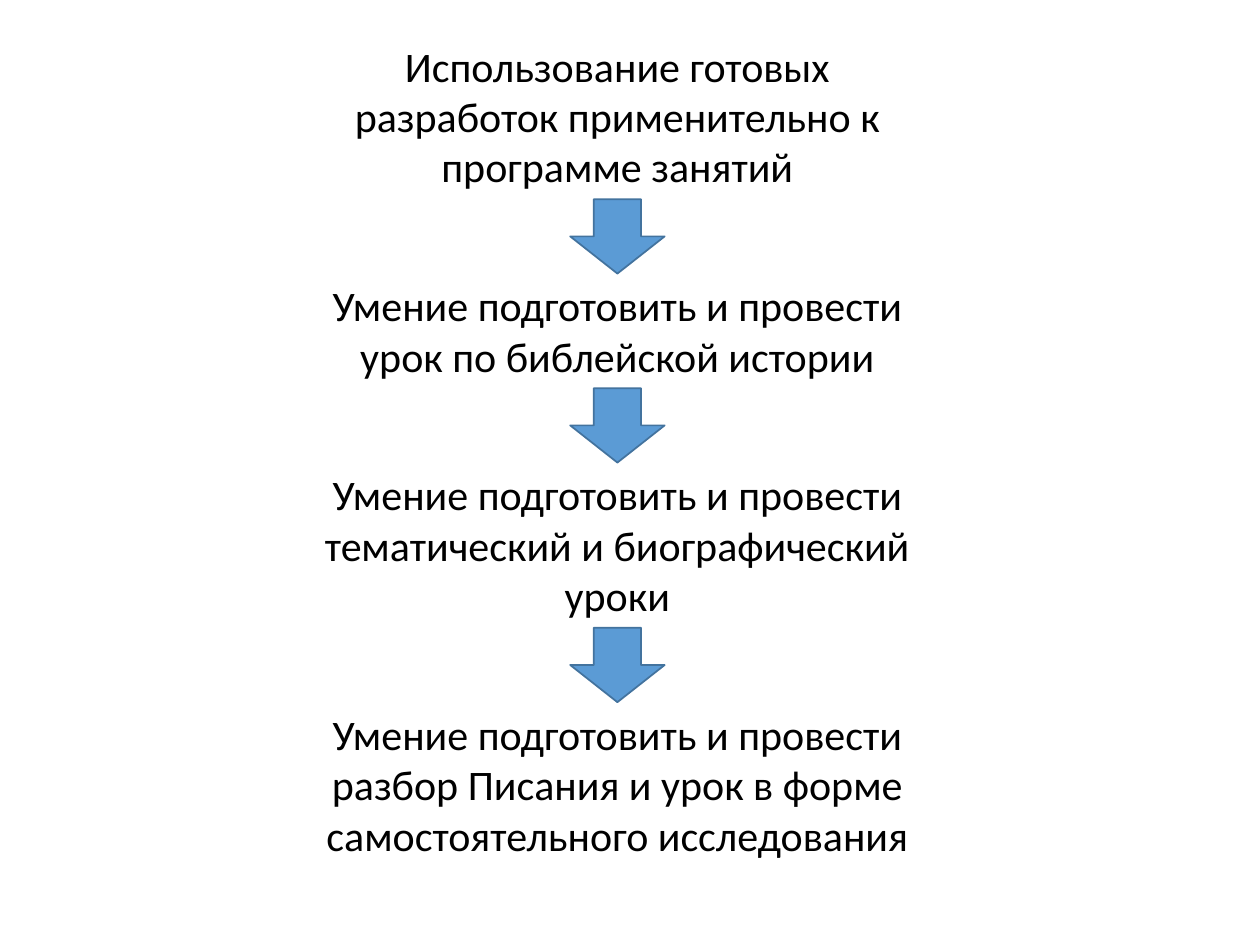
"""Build a slide with four teaching steps joined by down arrows."""
from pptx import Presentation
from pptx.dml.color import RGBColor
from pptx.enum.shapes import MSO_SHAPE
from pptx.enum.text import MSO_AUTO_SIZE, PP_ALIGN
from pptx.util import Pt

DOWN = MSO_SHAPE.DOWN_ARROW
CENTER = PP_ALIGN.CENTER
GROW = MSO_AUTO_SIZE.SHAPE_TO_FIT_TEXT

COLORS = {"text": "000000", "fill": "5B9BD5", "line": "43739E"}
STEPS = [
    ("Использование готовых разработок применительно к программе занятий", 3),
    ("Умение подготовить и провести урок по библейской истории", 2),
    ("Умение подготовить и провести тематический и биографический уроки", 3),
    ("Умение подготовить и провести разбор Писания и урок в форме "
     "самостоятельного исследования", 3),
]
LEFT, TOP, WIDTH = 172.8, 19.44, 360
LINE, PAD = 28.9, 7.7
ARROW_W, ARROW_H = 54, 42.5


def color(name):
    return RGBColor.from_string(COLORS[name])


def add_text(slide, text, *, top, height, size=24, font="Calibri"):
    box = slide.shapes.add_textbox(Pt(LEFT), Pt(top), Pt(WIDTH), Pt(height))
    frame = box.text_frame
    frame.word_wrap = True
    frame.auto_size = GROW
    par = frame.paragraphs[0]
    par.alignment = CENTER
    run = par.add_run()
    run.text = text
    run.font.size = Pt(size)
    run.font.name = font
    run.font.color.rgb = color("text")


def add_arrow(slide, top):
    left = LEFT + (WIDTH - ARROW_W) / 2
    arrow = slide.shapes.add_shape(DOWN, Pt(left), Pt(top), Pt(ARROW_W), Pt(ARROW_H))
    arrow.shadow.inherit = False
    arrow.fill.solid()
    arrow.fill.fore_color.rgb = color("fill")
    arrow.line.color.rgb = color("line")
    arrow.line.width = Pt(1)


def main():
    deck = Presentation()
    deck.slide_width, deck.slide_height = Pt(720), Pt(540)
    slide = deck.slides.add_slide(deck.slide_layouts[6])
    top = TOP
    ends = []
    for text, lines in STEPS:
        height = lines * LINE + PAD
        add_text(slide, text, top=top, height=height)
        ends.append(top + height)
        top += height + ARROW_H
    for end in ends[:-1]:
        add_arrow(slide, end)
    deck.save("out.pptx")


if __name__ == "__main__":
    main()
